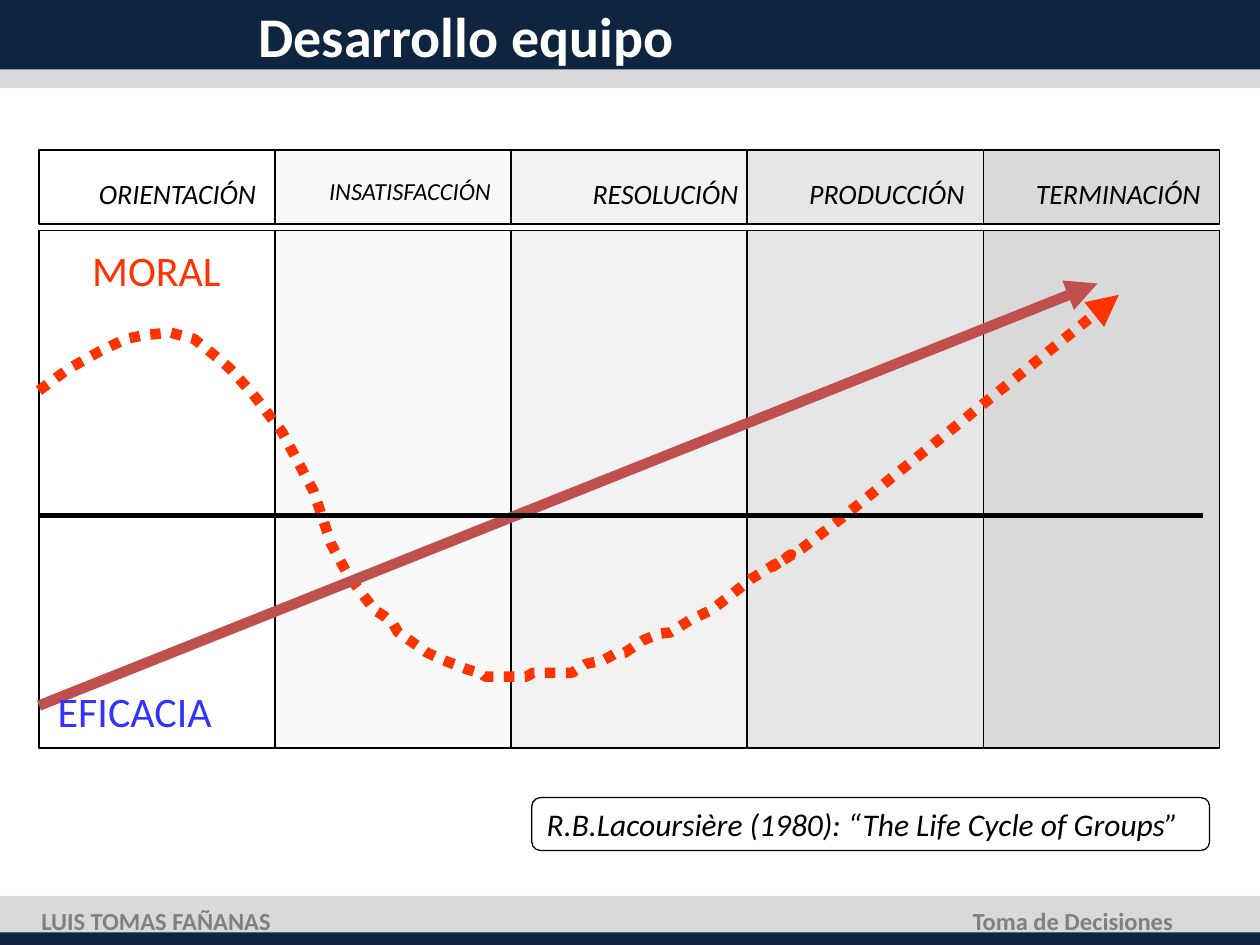
from collections import namedtuple

from lxml.etree import SubElement
from pptx import Presentation
from pptx.dml.color import RGBColor
from pptx.enum.dml import MSO_LINE
from pptx.enum.shapes import MSO_CONNECTOR, MSO_SHAPE
from pptx.enum.text import MSO_ANCHOR, PP_ALIGN
from pptx.oxml.ns import qn
from pptx.util import Inches, Pt

Box = namedtuple("Box", "left top width height")
FONT = "Calibri"
NAVY, SILVER, BLACK, WHITE = "0F243E", "D9D9D9", "000000", "FFFFFF"
ORANGE, BRICK, BLUE, GRAY = "FF3300", "C0504D", "3333FF", "808080"

# Stage name, column shade, text size, offset and width of its label
STAGES = [
    ("ORIENTACIÓN", WHITE, 16, 0, 1.82),
    ("INSATISFACCIÓN", "F9F9F9", 14, -0.08, 1.89),
    ("RESOLUCIÓN", "F2F2F2", 16, 0.08, 1.82),
    ("PRODUCCIÓN", "E6E6E6", 16, 0, 1.82),
    ("TERMINACIÓN", SILVER, 16, 0, 1.82),
]

# Morale curve, in inches from the top left corner of the chart
MORALE = [
    (0, 1.27), (0.23, 1.1), (0.48, 0.96), (0.69, 0.86), (0.84, 0.83),
    (1.04, 0.81), (1.23, 0.86), (1.38, 0.98), (1.51, 1.09), (1.7, 1.3),
    (1.93, 1.6), (2.18, 2.07), (2.32, 2.49), (2.45, 2.73), (2.66, 3.01),
    (2.74, 3.06), (2.81, 3.12), (2.85, 3.19), (2.91, 3.23), (3.08, 3.35),
    (3.21, 3.41), (3.39, 3.48), (3.52, 3.52), (3.54, 3.54), (3.87, 3.54),
    (3.92, 3.51), (4.15, 3.51), (4.23, 3.51), (4.34, 3.44), (4.48, 3.41),
    (4.57, 3.36), (4.65, 3.35), (4.8, 3.25), (4.92, 3.2), (5.01, 3.19),
    (5.17, 3.09), (5.34, 3.01), (5.47, 2.91), (5.66, 2.76), (5.97, 2.57),
    (5.82, 2.67), (6.06, 2.52), (6.31, 2.33), (8.57, 0.51),
]


def color(hex_code):
    return RGBColor.from_string(hex_code)


def inches(box):
    return [Inches(length) for length in box]


def write(frame, text, size, ink, align=PP_ALIGN.LEFT, bold=False,
          italic=False, anchor=MSO_ANCHOR.TOP, wrap=True):
    frame.word_wrap = wrap
    frame.vertical_anchor = anchor
    paragraph = frame.paragraphs[0]
    paragraph.alignment = align
    run = paragraph.add_run()
    run.text = text
    font = run.font
    font.name, font.size, font.bold, font.italic = FONT, Pt(size), bold, italic
    font.color.rgb = color(ink)


def add_label(slide, box, text, size, ink, **style):
    label = slide.shapes.add_textbox(*inches(box))
    write(label.text_frame, text, size, ink, **style)


def add_panel(slide, box, fill, outline=0, kind=MSO_SHAPE.RECTANGLE):
    panel = slide.shapes.add_shape(kind, *inches(box))
    panel.shadow.inherit = False
    panel.fill.solid()
    panel.fill.fore_color.rgb = color(fill)
    if outline:
        panel.line.color.rgb = color(BLACK)
        panel.line.width = Pt(outline)
    else:
        panel.line.fill.background()
    return panel


def add_arrowhead(stroke):
    outline = stroke._element.spPr.find(qn("a:ln"))
    SubElement(outline, qn("a:tailEnd"), type="triangle")


def add_line(slide, start, end, ink, width):
    connector = slide.shapes.add_connector(
        MSO_CONNECTOR.STRAIGHT, *inches(start + end))
    connector.line.color.rgb = color(ink)
    connector.line.width = Pt(width)
    SubElement(connector._element.spPr, qn("a:effectLst"))
    return connector


def add_header(slide, box):
    add_panel(slide, box, SILVER)
    add_panel(slide, box._replace(height=0.55), NAVY)
    title = slide.shapes.title
    title.left, title.top, title.width, title.height = inches(
        (box.left + 1.95, box.top, 7.56, 0.56))
    write(title.text_frame, "Desarrollo equipo", 32, WHITE, bold=True,
          anchor=MSO_ANCHOR.MIDDLE)
    # Bring the title in front of the bands
    slide.shapes._spTree.append(title._element)


def add_footer(slide, box):
    add_panel(slide, box._replace(height=0.34), SILVER)
    add_panel(slide, Box(box.left, box.top + 0.29, box.width, 0.1), NAVY)
    style = dict(bold=True, anchor=MSO_ANCHOR.MIDDLE, wrap=False)
    add_label(slide, Box(box.left + 0.23, box.top + 0.03, 2.04, 0.34),
              "LUIS TOMAS FAÑANAS", 14, GRAY, **style)
    add_label(slide, Box(box.left + 7.61, box.top + 0.03, 1.8, 0.34),
              "Toma de Decisiones", 14, GRAY, align=PP_ALIGN.RIGHT, **style)


def add_stages(slide, box, heading_height, gap):
    column = box.width / len(STAGES)
    body_top = box.top + heading_height + gap
    body_height = box.height - heading_height - gap
    for top, height in ((body_top, body_height), (box.top, heading_height)):
        for index, (_, shade, *_) in enumerate(STAGES):
            left = box.left + index * column
            add_panel(slide, Box(left, top, column, height), shade, 1)
    for index, (name, _, size, offset, width) in enumerate(STAGES):
        left = box.left + index * column + offset
        add_label(slide, Box(left, box.top + 0.16, width, 0.37), name, size,
                  BLACK, align=PP_ALIGN.RIGHT, italic=True)
    return Box(box.left, body_top, box.width, body_height)


def add_curves(slide, box):
    left, top = box.left, box.top
    # Morale: dotted curve
    points = [(Inches(left + x), Inches(top + y)) for x, y in MORALE]
    builder = slide.shapes.build_freeform(*points[0])
    builder.add_line_segments(points[1:], close=False)
    morale = builder.convert_to_shape()
    morale.shadow.inherit = False
    morale.fill.background()
    morale.line.color.rgb = color(ORANGE)
    morale.line.width = Pt(6)
    morale.line.dash_style = MSO_LINE.ROUND_DOT
    add_arrowhead(morale)

    # Effectiveness: straight arrow
    effectiveness = add_line(slide, (left, top + 3.77),
                             (left + 8.4, top + 0.42), BRICK, 6)
    add_arrowhead(effectiveness)

    add_label(slide, Box(left + 0.11, top + 0.06, 1.43, 0.5), "MORAL", 24,
              ORANGE, align=PP_ALIGN.RIGHT)
    add_label(slide, Box(left + 0.05, top + 3.56, 2.06, 0.5), "EFICACIA", 24,
              BLUE)
    # Midline
    middle = top + 0.55 * box.height
    add_line(slide, (left - 0.01, middle), (left + 9.24, middle), BLACK, 3)


def add_citation(slide, box):
    citation = add_panel(slide, box, WHITE, 0.75, MSO_SHAPE.ROUNDED_RECTANGLE)
    write(citation.text_frame,
          "R.B.Lacoursière (1980): “The Life Cycle of Groups”", 18, BLACK,
          italic=True, anchor=MSO_ANCHOR.MIDDLE, wrap=False)


def main():
    deck = Presentation()
    deck.slide_width, deck.slide_height = Inches(10), Inches(7.5)
    slide = deck.slides.add_slide(deck.slide_layouts.get_by_name("Title Only"))
    add_footer(slide, Box(0, 7.11, 10, 0.39))
    add_header(slide, Box(0, 0, 10, 0.7))
    chart = add_stages(slide, Box(0.31, 1.19, 9.37, 4.75), 0.59, 0.05)
    add_curves(slide, chart)
    add_citation(slide, Box(4.22, 6.33, 5.38, 0.42))
    deck.save("out.pptx")


if __name__ == "__main__":
    main()
